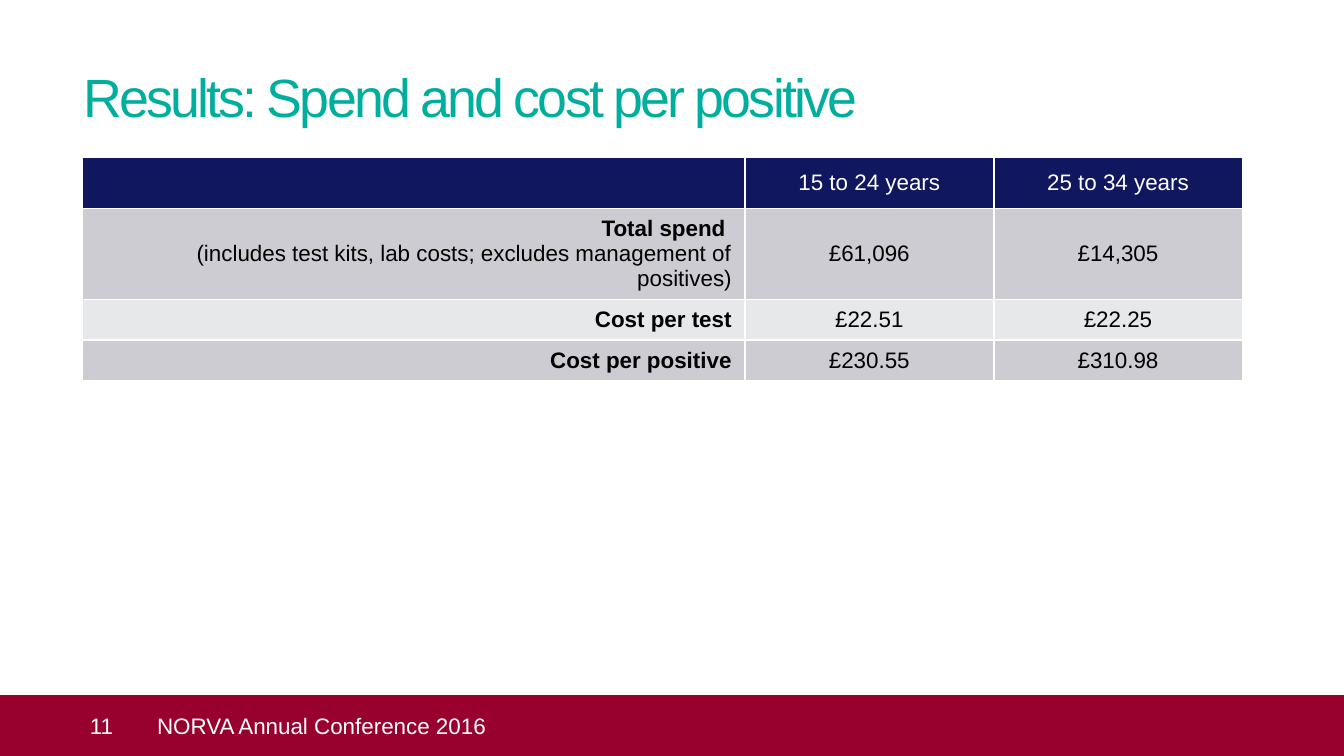
from pptx import Presentation
from pptx.dml.color import RGBColor
from pptx.enum import shapes, text
from pptx.util import Cm, Pt

LEFT, MID, RIGHT = text.PP_ALIGN.LEFT, text.PP_ALIGN.CENTER, text.PP_ALIGN.RIGHT
WHITE, BLACK, NAVY = "FFFFFF", "000000", "11175E"
TEAL, RED = "00AE9E", "98002E"
BANDS = ["CCCCD2", "E7E8EA"]
ROWS = [
    ["", "15 to 24 years", "25 to 34 years"],
    ["Total spend \n(includes test kits, lab costs; excludes management of positives)",
     "£61,096", "£14,305"],
    ["Cost per test", "£22.51", "£22.25"],
    ["Cost per positive", "£230.55", "£310.98"],
]
WIDTHS = [12.52, 4.7, 4.7]
HEIGHTS = [0.77, 1.72, 0.77, 0.77]


def paint(fill, tone):
    fill.solid()
    fill.fore_color.rgb = RGBColor.from_string(tone)


def style(para, size, tone, align=LEFT, bold=False):
    para.alignment = align
    for run in para.runs:
        font = run.font
        font.name, font.size, font.bold = "Arial", Pt(size), bold
        font.color.rgb = RGBColor.from_string(tone)


def set_frame(frame, words, size, tone, left=0):
    frame.text = words
    frame.word_wrap = True
    frame.auto_size = text.MSO_AUTO_SIZE.NONE
    frame.vertical_anchor = text.MSO_ANCHOR.MIDDLE
    frame.margin_left = Cm(left)
    frame.margin_top = frame.margin_right = frame.margin_bottom = 0
    style(frame.paragraphs[0], size, tone)


def add_title(slide, words):
    title = slide.shapes.title
    title.left, title.top = Cm(1.57), Cm(1.14)
    title.width, title.height = Cm(22.3), Cm(1.35)
    set_frame(title.text_frame, words, 28.8, TEAL)
    for run in title.text_frame.paragraphs[0].runs:
        run.font._element.set("spc", "-150")


def fill_cell(cell, words, row, col):
    cell.text = words
    cell.vertical_anchor = text.MSO_ANCHOR.MIDDLE
    cell.margin_left = cell.margin_right = Cm(0.25)
    cell.margin_top = cell.margin_bottom = Cm(0.1)
    head = row == 0
    paint(cell.fill, NAVY if head else BANDS[(row - 1) % 2])
    for i, para in enumerate(cell.text_frame.paragraphs):
        label = col == 0
        style(para, 12, WHITE if head else BLACK,
              RIGHT if label else MID, label and i == 0)


def add_grid(slide):
    frame = slide.shapes.add_table(len(ROWS), len(WIDTHS), Cm(1.56), Cm(2.96),
                                   Cm(sum(WIDTHS)), Cm(sum(HEIGHTS)))
    table = frame.table
    for col, width in zip(table.columns, WIDTHS):
        col.width = Cm(width)
    for row, height in zip(table.rows, HEIGHTS):
        row.height = Cm(height)
    for r, row in enumerate(ROWS):
        for c, words in enumerate(row):
            fill_cell(table.cell(r, c), words, r, c)


def add_footer(slide, number, words):
    top, high = Cm(13.13), Cm(1.15)
    bar = slide.shapes.add_shape(shapes.MSO_SHAPE.RECTANGLE, 0, top, Cm(25.4), high)
    bar.shadow.inherit = False
    paint(bar.fill, RED)
    bar.line.fill.background()
    set_frame(bar.text_frame, number, 12, WHITE, 1.7)
    box = slide.shapes.add_textbox(Cm(2.49), top, Cm(22.4), high)
    set_frame(box.text_frame, words, 12, WHITE, 0.48)


def main():
    deck = Presentation()
    deck.slide_width, deck.slide_height = Cm(25.4), Cm(14.28)
    slide = deck.slides.add_slide(deck.slide_layouts[5])
    add_title(slide, "Results: Spend and cost per positive")
    add_grid(slide)
    add_footer(slide, "11", "NORVA Annual Conference 2016")
    deck.save("out.pptx")


if __name__ == "__main__":
    main()
